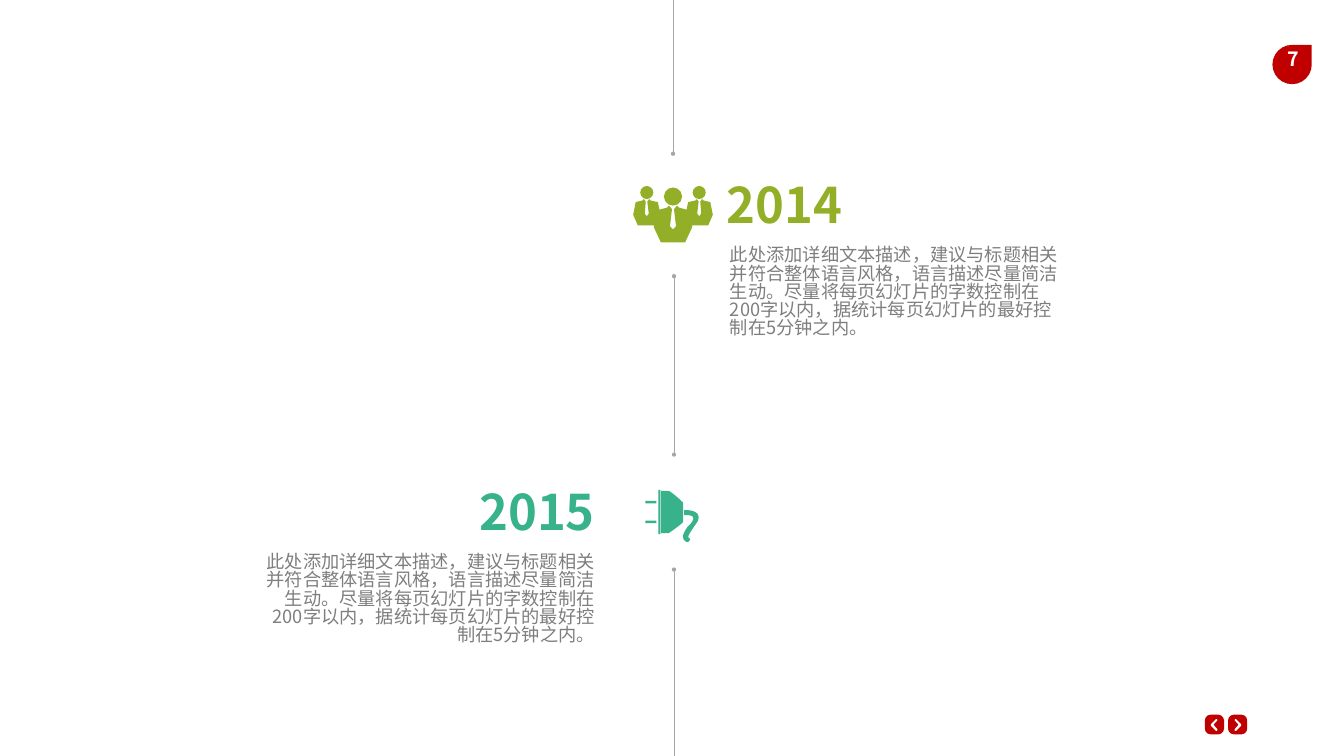
from lxml import etree
from pptx import Presentation
from pptx.dml.color import RGBColor
from pptx.enum.shapes import MSO_CONNECTOR, MSO_SHAPE
from pptx.enum.text import MSO_ANCHOR, PP_ALIGN
from pptx.oxml.ns import qn
from pptx.util import Inches, Pt

LEFT, CENTER, RIGHT = PP_ALIGN.LEFT, PP_ALIGN.CENTER, PP_ALIGN.RIGHT
TOP, MIDDLE = MSO_ANCHOR.TOP, MSO_ANCHOR.MIDDLE
OVAL, TEARDROP = MSO_SHAPE.OVAL, MSO_SHAPE.TEAR
RECT, ROUNDED = MSO_SHAPE.RECTANGLE, MSO_SHAPE.ROUNDED_RECTANGLE
STRAIGHT = MSO_CONNECTOR.STRAIGHT

FONT = "Noto Sans CJK SC"
RED, GREEN, TEAL = "C00000", "92AF27", "38B28A"
GRAY, LINE_GRAY, WHITE = "7E7E7E", "A6A6A6", "FFFFFF"
BODY = ("此处添加详细文本描述，建议与标题相关并符合整体语言风格，语言描述尽量简洁生动。"
        "尽量将每页幻灯片的字数控制在200字以内，据统计每页幻灯片的最好控制在5分钟之内。")


def rgb(color):
    return RGBColor.from_string(color)


def paint(sp, color):
    sp.shadow.inherit = False
    sp.fill.solid()
    sp.fill.fore_color.rgb = rgb(color)
    sp.line.fill.background()
    return sp


def add_shape(shapes, kind, x, y, w, h, color):
    return paint(shapes.add_shape(kind, Inches(x), Inches(y), Inches(w), Inches(h)), color)


def add_outline(shapes, x, y, points, color):
    """Closed outline; points are offsets in inches from (x, y)."""
    pts = [(Inches(x + dx), Inches(y + dy)) for dx, dy in points]
    builder = shapes.build_freeform(*pts[0])
    builder.add_line_segments(pts[1:], close=True)
    return paint(builder.convert_to_shape(), color)


def curve(start, *segments, steps=10):
    """Points along a chain of cubic Bezier segments."""
    points = [start]
    for c1, c2, end in segments:
        p0 = points[-1]
        for i in range(1, steps + 1):
            t = i / steps
            u = 1 - t
            points.append(tuple(u**3 * a + 3 * u * u * t * b + 3 * u * t * t * c + t**3 * d
                                for a, b, c, d in zip(p0, c1, c2, end)))
    return points


def add_text(s, text, x, y, w, h, size=26, color=GRAY, bold=False,
             align=LEFT, anchor=TOP, spacing=0.83):
    tf = s.shapes.add_textbox(Inches(x), Inches(y), Inches(w), Inches(h)).text_frame
    tf.word_wrap = True
    tf.vertical_anchor = anchor
    tf.margin_left = tf.margin_right = Inches(0.2)
    tf.margin_top = tf.margin_bottom = Inches(0.1)
    p = tf.paragraphs[0]
    p.alignment = align
    p.line_spacing = spacing
    r = p.add_run()
    r.text = text
    r.font.size = Pt(size)
    r.font.bold = bold
    r.font.name = FONT
    r.font.color.rgb = rgb(color)
    etree.SubElement(r.font._element, qn("a:ea")).set("typeface", FONT)


def add_line(s, x, y1, y2, ends):
    """Vertical timeline segment with round dots at the named ends."""
    cx = s.shapes.add_connector(STRAIGHT, Inches(x), Inches(y1), Inches(x), Inches(y2))
    cx.line.color.rgb = rgb(LINE_GRAY)
    cx.line.width = Pt(0.5)
    ln = cx.line._get_or_add_ln()
    for end in ends:
        etree.SubElement(ln, qn(f"a:{end}")).set("type", "oval")
    etree.SubElement(cx._element.spPr, qn("a:effectLst"))


def page_badge(s, x, y, number):
    add_shape(s.shapes, TEARDROP, x, y, 0.78, 0.78, RED)
    add_text(s, number, x - 0.08, y + 0.01, 0.97, 0.67, size=28, color=WHITE,
             bold=True, align=CENTER, spacing=0.85)


def nav_buttons(s, x, y):
    w, h, pitch = 0.38, 0.39, 0.46
    arrow = [(-0.07, 0.19), (0.03, 0.09), (0.05, 0.09), (0.06, 0.11), (-0.02, 0.2),
             (0.06, 0.29), (0.06, 0.31), (0.05, 0.32), (0.03, 0.32), (-0.07, 0.22)]
    for i, side in enumerate((1, -1)):
        left = x + i * pitch
        button = add_shape(s.shapes, ROUNDED, left, y, w, h, RED)
        button.adjustments[0] = 0.3
        add_outline(s.shapes, left + w / 2, y, [(side * dx, dy) for dx, dy in arrow], WHITE)


def team_icon(s, x, y):
    """Three people, mirrored about the middle of the 1.59 inch box."""
    shapes = s.shapes.add_group_shape().shapes
    mid = x + 0.8
    for dx, dy, size in ((0, 0.03, 0.36), (-0.52, 0, 0.26), (0.52, 0, 0.26)):
        add_shape(shapes, OVAL, mid + dx - size / 2, y + dy, size, size, GREEN)
    half = [(0, 0.86), (0.06, 0.8), (0.02, 0.46), (0.08, 0.39), (0.12, 0.43), (0.27, 0.47),
            (0.3, 0.32), (0.44, 0.29), (0.47, 0.26), (0.51, 0.31), (0.48, 0.55),
            (0.52, 0.6), (0.56, 0.55), (0.54, 0.31), (0.58, 0.26), (0.61, 0.29),
            (0.74, 0.32), (0.79, 0.57), (0.7, 0.78), (0.38, 0.78), (0.38, 0.82), (0.24, 1.12)]
    mirrored = [(-dx, dy) for dx, dy in reversed(half[1:])]
    add_outline(shapes, mid, y, half + mirrored, GREEN)


def plug_icon(s, x, y):
    shapes = s.shapes.add_group_shape().shapes
    # Prongs and plate
    for dx, dy, w, h in ((0, 0.22, 0.22, 0.05), (0, 0.61, 0.22, 0.05), (0.26, 0, 0.04, 0.88)):
        add_shape(shapes, RECT, x + dx, y + dy, w, h, TEAL)
    # Body
    body = curve((0.75, 0.26), ((0.75, 0.24), (0.5, 0.02), (0.46, 0.02)))
    body += [(0.31, 0.02), (0.31, 0.86)]
    body += curve((0.46, 0.86), ((0.5, 0.84), (0.74, 0.66), (0.75, 0.64)))
    add_outline(shapes, x, y, body, TEAL)
    # Cord
    cord = [(0.77, 0.4)] + curve(
        (0.77, 0.5),
        ((0.84, 0.5), (0.94, 0.5), (0.95, 0.55)),
        ((0.97, 0.6), (0.88, 0.7), (0.84, 0.73)),
        ((0.79, 0.81), (0.68, 0.95), (0.81, 1.03)),
        ((0.86, 1.06), (0.92, 0.97), (0.86, 0.95)),
        ((0.81, 0.92), (1.03, 0.66), (1.05, 0.6)),
        ((1.1, 0.42), (0.9, 0.4), (0.77, 0.4)))
    add_outline(shapes, x, y, cord, TEAL)


def milestone(s, x, y, w, year, color, align, indent=0):
    """Year with its description below; indent moves the description."""
    add_text(s, year, x, y, w, 1.29, size=70, color=color, bold=True,
             align=align, anchor=MIDDLE, spacing=0.91)
    add_text(s, BODY, x + indent, y + 1.34, w - indent, 2.13, align=align)


def timeline(s, x, bottom):
    add_line(s, x - 0.02, 3.05, 0, ["headEnd"])
    add_line(s, x, 5.48, 9.02, ["headEnd", "tailEnd"])
    add_line(s, x, 11.3, bottom, ["headEnd"])
    team_icon(s, x - 0.82, 3.69)
    milestone(s, x + 0.85, 3.47, 7.2, "2014", GREEN, LEFT, indent=0.06)
    plug_icon(s, x - 0.57, 9.72)
    milestone(s, x - 8.51, 9.56, 7.14, "2015", TEAL, RIGHT)


def main():
    prs = Presentation()
    prs.slide_width, prs.slide_height = Inches(26.66), Inches(15)
    s = prs.slides.add_slide(prs.slide_layouts[6])
    nav_buttons(s, 23.9, 14.18)
    page_badge(s, 25.24, 0.89, "7")
    timeline(s, 13.37, 15)
    prs.save("out.pptx")


if __name__ == "__main__":
    main()
